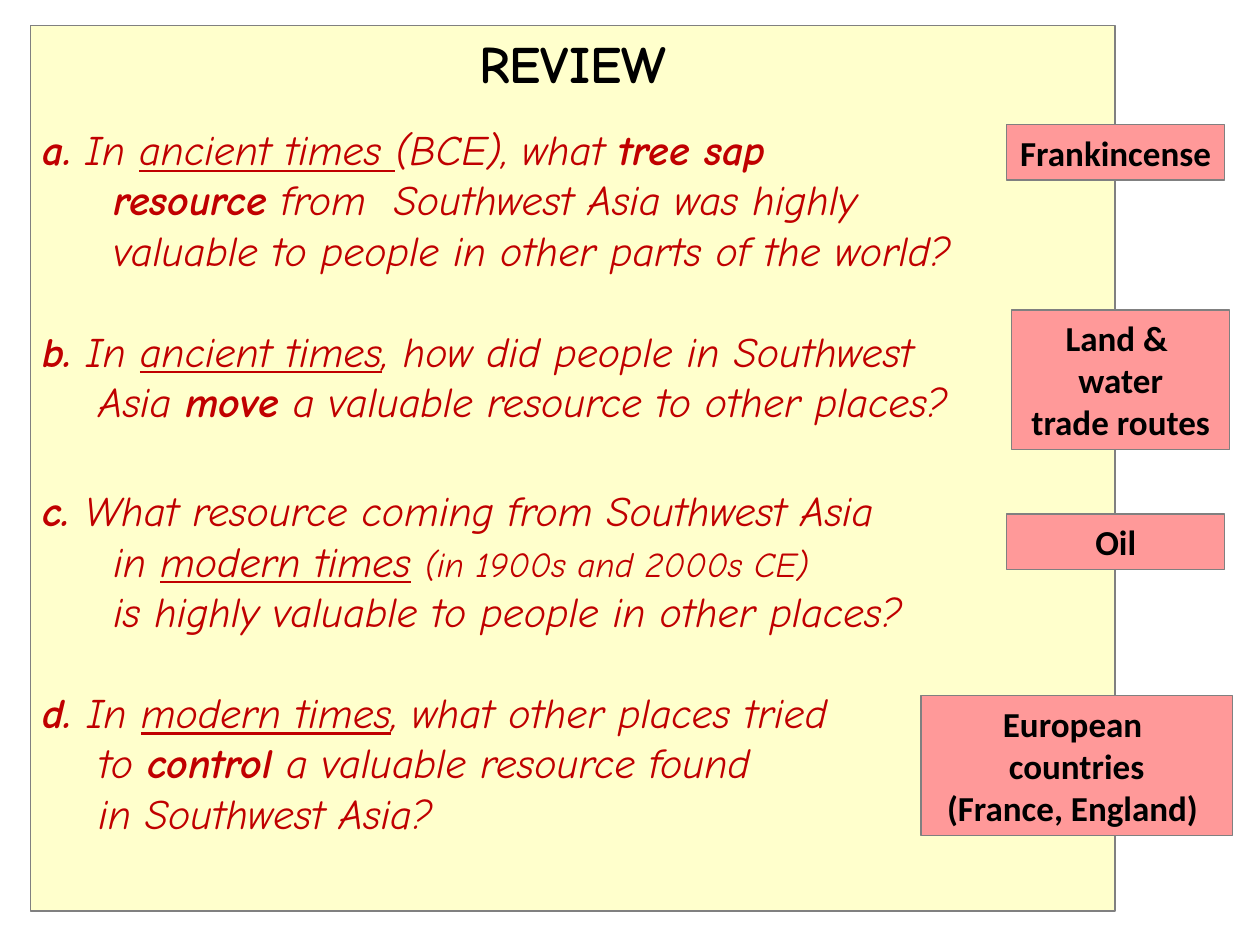
import dataclasses
import typing

import lxml.etree
import pptx
import pptx.dml.color
import pptx.enum.shapes
import pptx.enum.text
import pptx.oxml.ns
import pptx.shapes.autoshape
import pptx.slide
import pptx.text.text
import pptx.util

Inches = pptx.util.Inches
Pt = pptx.util.Pt

COLORS = {
    "panel": "FFFFCC",
    "card": "FF9999",
    "edge": "808080",
    "ask": "C00000",
    "ink": "000000",
}
HAND = "Comic Neue"
PLAIN = "Calibri"


class Phrase(typing.NamedTuple):
    text: str
    bold: bool = False
    under: bool = False
    size: int = 24


@dataclasses.dataclass
class Query:
    indent: float
    before: float
    wording: list[Phrase]


@dataclasses.dataclass
class Card:
    text: str
    left: float
    top: float
    width: float
    height: float


QUERIES = [
    Query(0.56, 0, [
        Phrase("a.", bold=True),
        Phrase(" In "),
        Phrase("ancient times ", under=True),
        Phrase("(BCE), what "),
        Phrase("tree sap\nresource", bold=True),
        Phrase(" from  Southwest Asia was highly\n"
               "valuable to people in other parts of the world?"),
    ]),
    Query(0.44, 28.8, [
        Phrase("b.", bold=True),
        Phrase(" In "),
        Phrase("ancient times", under=True),
        Phrase(", how did people in Southwest\nAsia "),
        Phrase("move", bold=True),
        Phrase(" a valuable resource to other places?"),
    ]),
    Query(0.56, 33.6, [
        Phrase("c. ", bold=True),
        Phrase("What resource coming from Southwest Asia\nin "),
        Phrase("modern times", under=True),
        Phrase(" "),
        Phrase("(in 1900s and 2000s CE)", size=20),
        Phrase("\nis highly valuable to people in other places?"),
    ]),
    Query(0.44, 28.8, [
        Phrase("d. ", bold=True),
        Phrase("In "),
        Phrase("modern times", under=True),
        Phrase(", what other places tried\nto "),
        Phrase("control", bold=True),
        Phrase(" a valuable resource found\nin Southwest Asia?"),
    ]),
]

CARDS = [
    Card("Frankincense", 7.99, 0.99, 1.73, 0.44),
    Card("Oil", 7.99, 4.08, 1.73, 0.44),
    Card("Land & \vwater\vtrade routes", 8.03, 2.46, 1.73, 1.11),
    Card("European \vcountries\v(France, England) ", 7.31, 5.52, 2.47, 1.11),
]


def tint(name: str) -> pptx.dml.color.RGBColor:
    return pptx.dml.color.RGBColor.from_string(COLORS[name])


def place(shape: pptx.shapes.autoshape.Shape, left: float, top: float,
          width: float, height: float) -> None:
    shape.left, shape.top = Inches(left), Inches(top)
    shape.width, shape.height = Inches(width), Inches(height)


def paint(shape: pptx.shapes.autoshape.Shape, fill: str) -> None:
    shape.fill.solid()
    shape.fill.fore_color.rgb = tint(fill)
    shape.line.color.rgb = tint("edge")
    shape.line.width = Pt(0.75)


def style(font: pptx.text.text.Font, face: str, size: int, color: str,
          bold: bool) -> None:
    font.name = face
    font.size = Pt(size)
    font.color.rgb = tint(color)
    font.bold = bold


def write_query(para: pptx.text.text._Paragraph, query: Query) -> None:
    para.space_before = Pt(query.before)
    props = para._p.get_or_add_pPr()
    props.set("marL", str(Inches(query.indent)))
    props.set("indent", str(-Inches(query.indent)))
    lxml.etree.SubElement(props, pptx.oxml.ns.qn("a:buNone"))
    for phrase in query.wording:
        for count, line in enumerate(phrase.text.split("\n")):
            if count:
                para.add_line_break()
            if line:
                run = para.add_run()
                run.text = line
                style(run.font, HAND, phrase.size, "ask", phrase.bold)
                run.font.italic = True
                run.font.underline = phrase.under
    for gap in para._p.findall(pptx.oxml.ns.qn("a:br")):
        lxml.etree.SubElement(gap, pptx.oxml.ns.qn("a:rPr"), sz="2400")


def add_card(slide: pptx.slide.Slide, card: Card) -> None:
    shape = slide.shapes.add_shape(
        pptx.enum.shapes.MSO_SHAPE.RECTANGLE, Inches(card.left),
        Inches(card.top), Inches(card.width), Inches(card.height))
    shape.shadow.inherit = False
    paint(shape, "card")
    frame = shape.text_frame
    frame.word_wrap = True
    frame.text = card.text.replace("\v", "\n")
    for para in frame.paragraphs:
        para.alignment = pptx.enum.text.PP_ALIGN.CENTER
        for run in para.runs:
            style(run.font, PLAIN, 20, "ink", True)


def set_title(title: pptx.shapes.autoshape.Shape) -> None:
    place(title, 0.24, 0.25, 8.61, 0.5)
    frame = title.text_frame
    frame.auto_size = pptx.enum.text.MSO_AUTO_SIZE.NONE
    frame.margin_top = frame.margin_bottom = 0
    frame.text = "REVIEW"
    style(frame.paragraphs[0].runs[0].font, HAND, 30, "ink", True)


def set_body(body: pptx.shapes.autoshape.Shape) -> None:
    place(body, 0.24, 0.2, 8.61, 7.03)
    paint(body, "panel")
    frame = body.text_frame
    frame.auto_size = pptx.enum.text.MSO_AUTO_SIZE.NONE
    frame.margin_top = Inches(0.78)
    for count, query in enumerate(QUERIES):
        para = frame.add_paragraph() if count else frame.paragraphs[0]
        write_query(para, query)


def main() -> None:
    deck = pptx.Presentation()
    deck.slide_width, deck.slide_height = Inches(10), Inches(7.5)
    slide = deck.slides.add_slide(deck.slide_layouts[1])
    title, body = slide.shapes.title, slide.placeholders[1]
    set_body(body)
    set_title(title)
    body.element.addnext(title.element)
    for card in CARDS:
        add_card(slide, card)
    deck.save("out.pptx")


if __name__ == "__main__":
    main()
